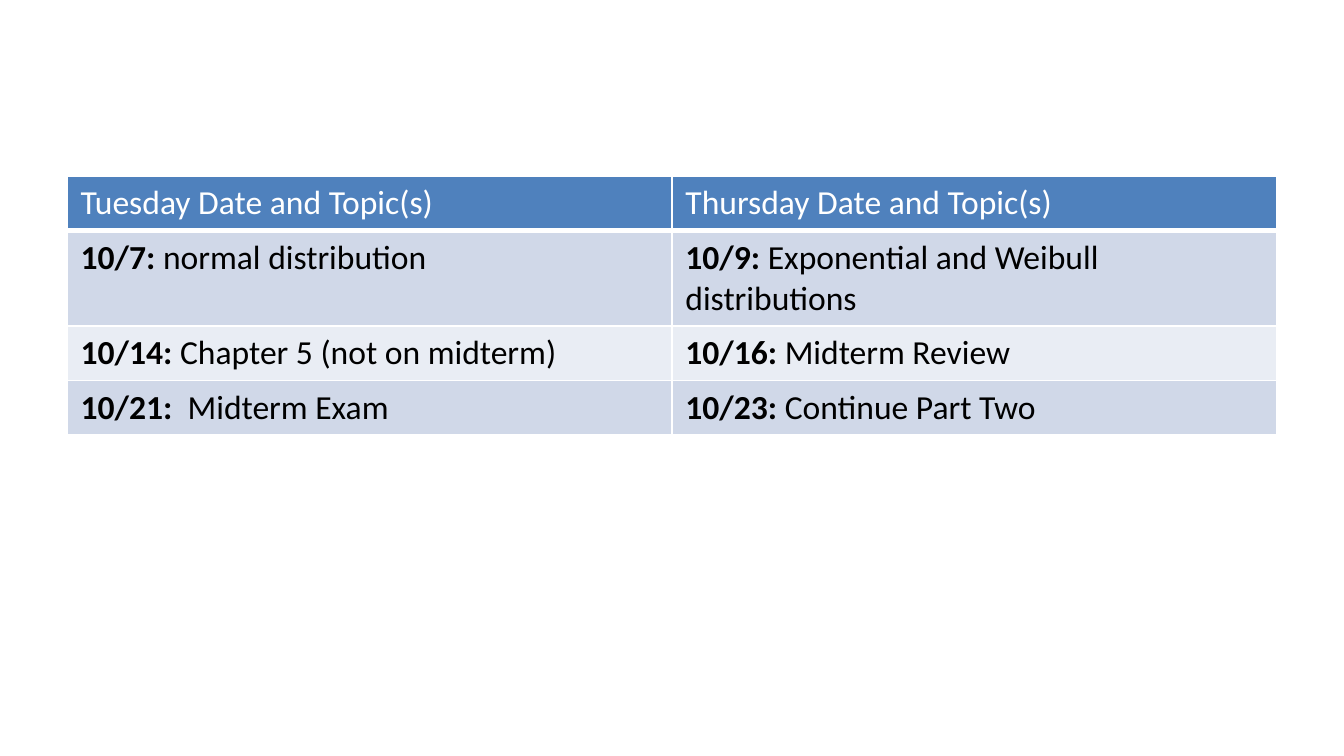
from lxml import etree
from pptx import Presentation
from pptx import util as u
from pptx.dml import color
from pptx.oxml import ns

SLIDE_SIZE = (720, 405)
HEADINGS = ["Tuesday Date and Topic(s)", "Thursday Date and Topic(s)"]
SESSIONS = [
    [("10/7:", " normal distribution"),
     ("10/9:", " Exponential and Weibull distributions")],
    [("10/14:", " Chapter 5 (not on midterm)"), ("10/16:", " Midterm Review")],
    [("10/21: ", " Midterm Exam"), ("10/23:", " Continue Part Two")],
]

THEME = {
    "font": "Calibri", "size": 18,
    "header": "4F81BD", "bands": ["D0D8E8", "E9EDF4"],
    "header_text": "FFFFFF", "text": "000000",
    "rule": "FFFFFF", "rule_width": 1, "header_rule_width": 3,
}
LEFT, TOP, COLUMN_WIDTH = 36, 94.3, 324
ROW_HEIGHTS = [29.2, 51.1, 29.2, 29.2]


def add_borders(cell, bottom_width):
    properties = cell._tc.get_or_add_tcPr()
    for side in "LRTB":
        width = bottom_width if side == "B" else THEME["rule_width"]
        border = etree.SubElement(properties, ns.qn(f"a:ln{side}"), w=str(u.Pt(width)))
        fill = etree.SubElement(border, ns.qn("a:solidFill"))
        etree.SubElement(fill, ns.qn("a:srgbClr"), val=THEME["rule"])


def fill_cell(cell, parts, background, text_color, bottom_width):
    """Style a cell and write its parts, each a pair of words and boldness."""
    add_borders(cell, bottom_width)
    cell.fill.solid()
    cell.fill.fore_color.rgb = color.RGBColor.from_string(background)
    for words, bold in parts:
        run = cell.text_frame.paragraphs[0].add_run()
        run.text = words
        font_format = {"name": THEME["font"], "size": u.Pt(THEME["size"]), "bold": bold}
        for attribute, value in font_format.items():
            setattr(run.font, attribute, value)
        run.font.color.rgb = color.RGBColor.from_string(text_color)


def main():
    deck = Presentation()
    deck.slide_width, deck.slide_height = map(u.Pt, SLIDE_SIZE)
    slide = deck.slides.add_slide(deck.slide_layouts[6])

    schedule = slide.shapes.add_table(
        len(ROW_HEIGHTS), len(HEADINGS), u.Pt(LEFT), u.Pt(TOP),
        u.Pt(COLUMN_WIDTH * len(HEADINGS)), u.Pt(sum(ROW_HEIGHTS))).table
    for column in schedule.columns:
        column.width = u.Pt(COLUMN_WIDTH)
    for row, height in zip(schedule.rows, ROW_HEIGHTS):
        row.height = u.Pt(height)

    for column, heading in enumerate(HEADINGS):
        fill_cell(schedule.cell(0, column), [(heading, False)], THEME["header"],
                  THEME["header_text"], THEME["header_rule_width"])
    for week, sessions in enumerate(SESSIONS):
        band = THEME["bands"][week % 2]
        for column, (date, topic) in enumerate(sessions):
            fill_cell(schedule.cell(week + 1, column), [(date, True), (topic, False)],
                      band, THEME["text"], THEME["rule_width"])

    deck.save("out.pptx")


if __name__ == "__main__":
    main()
